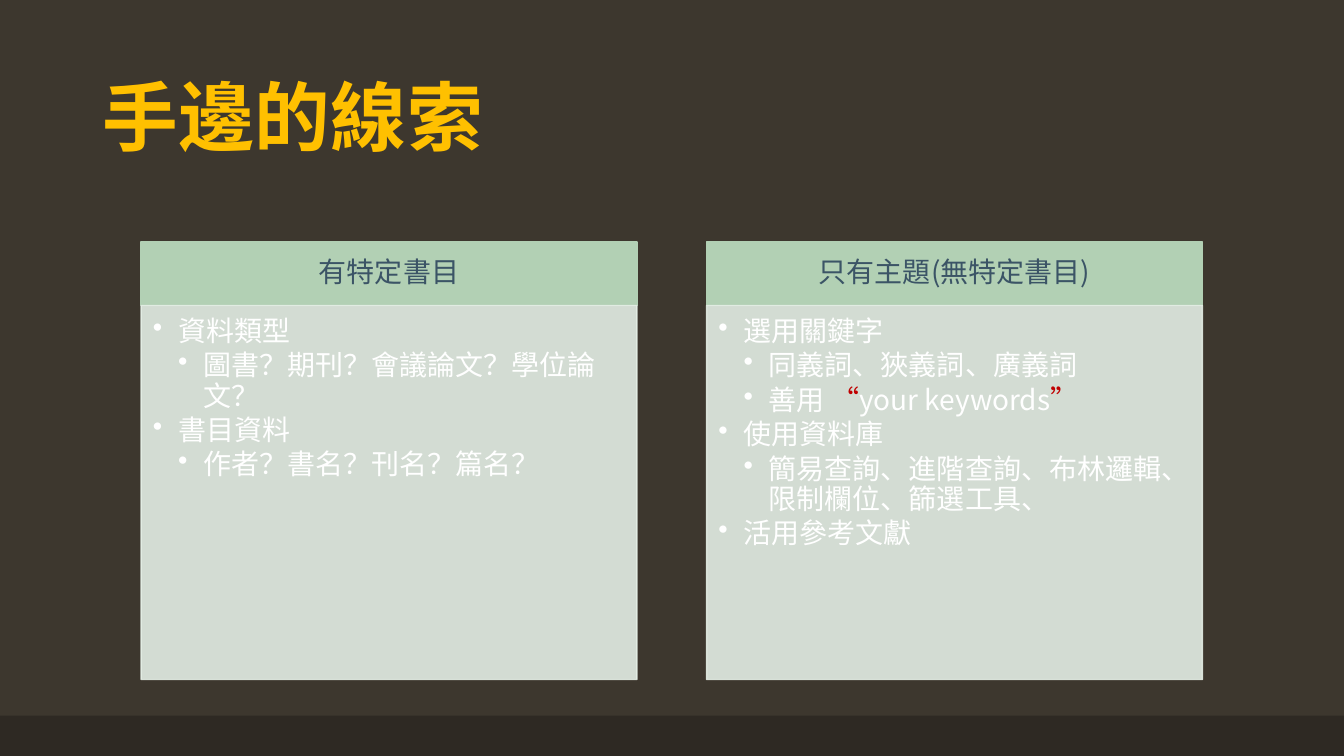
from pptx import Presentation
from pptx.dml.color import RGBColor
from pptx.enum.shapes import MSO_SHAPE as Shape
from pptx.enum.text import MSO_ANCHOR as Anchor, PP_ALIGN as Align
from pptx.oxml.ns import qn
from pptx.oxml.xmlchemy import OxmlElement as Element
from pptx.util import Pt

FONT = "Noto Sans CJK SC"
COLOURS = {
    "page": "3D372E", "footer": "2E2923", "title": "FFC000", "header": "B2D0B4",
    "panel": "E4EEE5", "heading": "3B5466", "body": "FFFFFF", "quote": "C00000",
}
PANELS = [
    ("有特定書目", [
        (0, [("資料類型", "body")]),
        (1, [("圖書？期刊？會議論文？學位論文？", "body")]),
        (0, [("書目資料", "body")]),
        (1, [("作者？書名？刊名？篇名？", "body")]),
    ]),
    ("只有主題(無特定書目)", [
        (0, [("選用關鍵字", "body")]),
        (1, [("同義詞、狹義詞、廣義詞", "body")]),
        (1, [("善用 ", "body"), ("“", "quote"), ("your keywords", "body"), ("”", "quote")]),
        (0, [("使用資料庫", "body")]),
        (1, [("簡易查詢、進階查詢、布林邏輯、限制欄位、篩選工具、", "body")]),
        (0, [("活用參考文獻", "body")]),
    ]),
]


def colour(name):
    """Return the named colour."""
    return RGBColor.from_string(COLOURS[name])


def apply(target, **values):
    """Set each given format value on the target."""
    for name, value in values.items():
        setattr(target, name, value)


def add_run(para, text, shade, **values):
    """Add a run of text in the slide's font."""
    run = para.add_run()
    run.text = text
    apply(run.font, name=FONT, **values)
    run.font.color.rgb = colour(shade)
    east_asian = Element("a:ea")
    east_asian.set("typeface", FONT)
    run.font._element.append(east_asian)
    return run


def add_block(page, box, shade, alpha=None):
    """Add a filled rectangle and return it."""
    block = page.shapes.add_shape(Shape.RECTANGLE, *map(Pt, box))
    block.shadow.inherit = False
    block.fill.solid()
    block.fill.fore_color.rgb = block.line.color.rgb = colour(shade)
    block.line.width = Pt(1)
    if alpha:
        for tint in block._element.spPr.iter(qn("a:srgbClr")):
            opacity = Element("a:alpha")
            opacity.set("val", str(alpha * 1000))
            tint.append(opacity)
    return block


def set_frame(frame, anchor, insets):
    """Set wrapping, anchor and insets (left, top, right, bottom)."""
    left, top, right, bottom = map(Pt, insets)
    apply(frame, word_wrap=True, vertical_anchor=anchor, margin_left=left,
          margin_top=top, margin_right=right, margin_bottom=bottom)


def add_bullet(para, level):
    """Give a paragraph a hanging bullet for its level."""
    properties = para._p.get_or_add_pPr()
    properties.set("marL", str(Pt(18 * (level + 1))))
    properties.set("indent", str(Pt(-18)))
    bullet = Element("a:buChar")
    bullet.set("char", "•")
    properties.append(bullet)


def draw_title(page, box, text):
    """Draw the slide title at the bottom of its box."""
    frame = page.shapes.add_textbox(*map(Pt, box)).text_frame
    set_frame(frame, Anchor.BOTTOM, (7.2, 3.6, 7.2, 3.6))
    para = frame.paragraphs[0]
    para.line_spacing = 0.9
    run = add_run(para, text, "title", size=Pt(54), bold=True)
    run.font._element.set("spc", "50")


def draw_panel(page, box, heading, items):
    """Draw a header bar over a bulleted panel."""
    left, top, width, height = box
    bar = 45.4
    header = add_block(page, (left, top, width, bar), "header").text_frame
    set_frame(header, Anchor.MIDDLE, (11.2, 6.4, 11.2, 6.4))
    para = header.paragraphs[0]
    apply(para, alignment=Align.CENTER, line_spacing=0.9)
    add_run(para, heading, "heading", size=Pt(20))

    body = add_block(page, (left, top + bar, width, height - bar), "panel", 90).text_frame
    set_frame(body, Anchor.TOP, (8.4, 8.4, 11.2, 12.6))
    for index, (level, runs) in enumerate(items):
        para = body.add_paragraph() if index else body.paragraphs[0]
        add_bullet(para, level)
        apply(para, level=level, alignment=Align.LEFT, line_spacing=0.9, space_after=Pt(3))
        for text, shade in runs:
            add_run(para, text, shade, size=Pt(20))


def draw_page(page, width, height):
    """Draw the whole slide."""
    page.background.fill.solid()
    page.background.fill.fore_color.rgb = colour("page")
    footer = add_block(page, (0, height - 28.8, width, 28.8), "footer")
    footer.line.fill.background()
    draw_title(page, (66, 28.8, 828, 90), "手邊的線索")
    for index, (heading, items) in enumerate(PANELS):
        draw_panel(page, (100.8 + 403.9 * index, 172.8, 354.2, 312.6), heading, items)


def main():
    """Build and save the deck."""
    deck = Presentation()
    width, height = 960, 540
    apply(deck, slide_width=Pt(width), slide_height=Pt(height))
    draw_page(deck.slides.add_slide(deck.slide_layouts[6]), width, height)
    deck.save("out.pptx")


if __name__ == "__main__":
    main()
